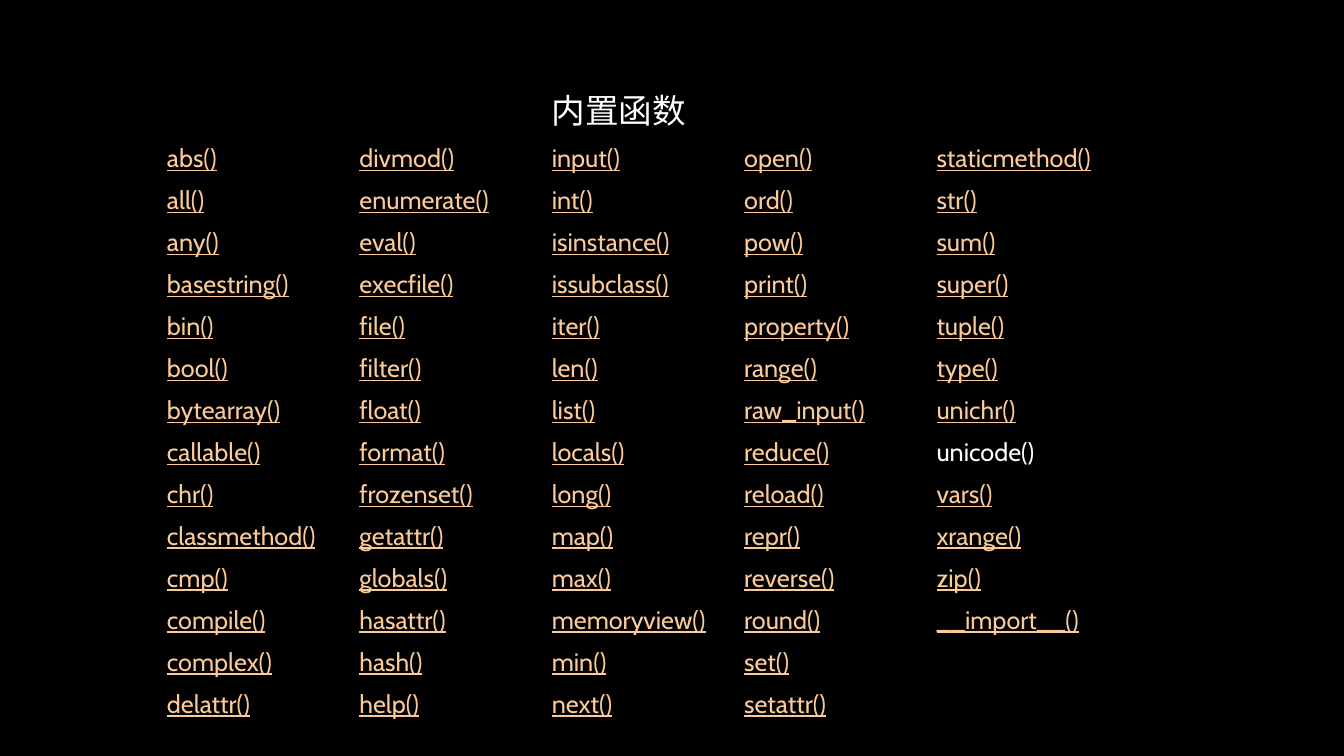
from pptx import Presentation
from pptx.dml.color import RGBColor
from pptx.enum.text import MSO_ANCHOR
from pptx.oxml.ns import qn
from pptx.util import Pt

MIDDLE = MSO_ANCHOR.MIDDLE
SCALE = 914400 / 100.8
NO_STYLE_NO_GRID = "{2D5ABB26-0587-4C30-8999-92F81FD0307C}"

COLUMNS = [
    "abs all any basestring bin bool bytearray callable chr classmethod cmp compile complex delattr",
    "divmod enumerate eval execfile file filter float format frozenset getattr globals hasattr hash help",
    "input int isinstance issubclass iter len list locals long map max memoryview min next",
    "open ord pow print property range raw_input reduce reload repr reverse round set setattr",
    "staticmethod str sum super tuple type unichr unicode vars xrange zip __import__",
]


def px(n):
    return round(n * SCALE)


def write(cell, text, size=18, color="FBCA98", underline=True):
    r = cell.text_frame.paragraphs[0].add_run()
    r.text = text
    r.font.name = "Cabin"
    r.font.size = Pt(size)
    r.font.underline = underline
    r.font.color.rgb = RGBColor.from_string(color)


prs = Presentation()
prs.slide_width, prs.slide_height = px(1344), px(756)
s = prs.slides.add_slide(prs.slide_layouts[6])
s.background.fill.solid()
s.background.fill.fore_color.rgb = RGBColor.from_string("000000")

table = s.shapes.add_table(15, 5, px(159), px(81), px(962), px(641)).table
table.first_row = False
table.horz_banding = False
table._tbl.tblPr.find(qn("a:tableStyleId")).text = NO_STYLE_NO_GRID

for i, row in enumerate(table.rows):
    row.height = px(42 if i else 53)

for cell in table.iter_cells():
    cell.fill.background()
    cell.vertical_anchor = MIDDLE
    cell.margin_left = cell.margin_right = px(8)
    cell.margin_top = cell.margin_bottom = px(4)

write(table.cell(0, 2), "内置函数", size=24, color="FFFFFF", underline=False)

for col, names in enumerate(COLUMNS):
    for row, name in enumerate(names.split(), start=1):
        linked = name != "unicode"
        write(table.cell(row, col), f"{name}()",
              color="FBCA98" if linked else "FFFFFF", underline=linked)

prs.save("out.pptx")
